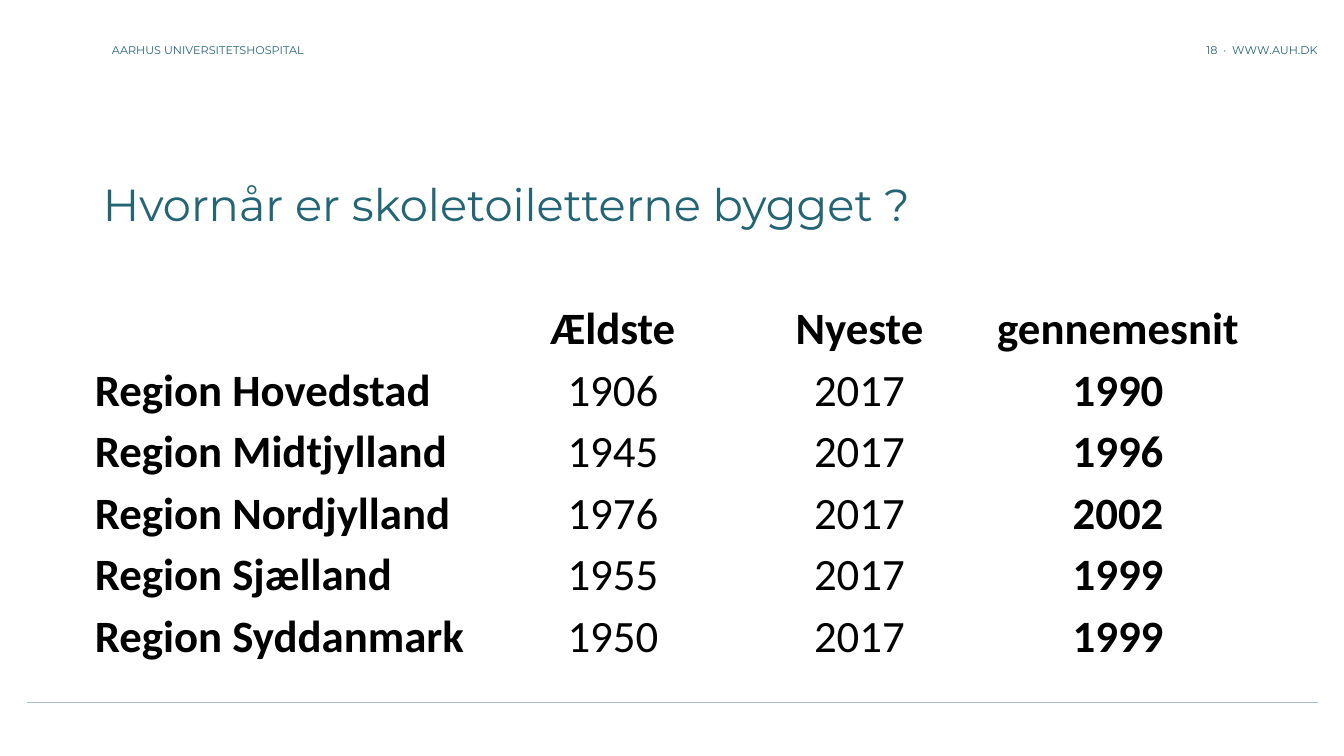
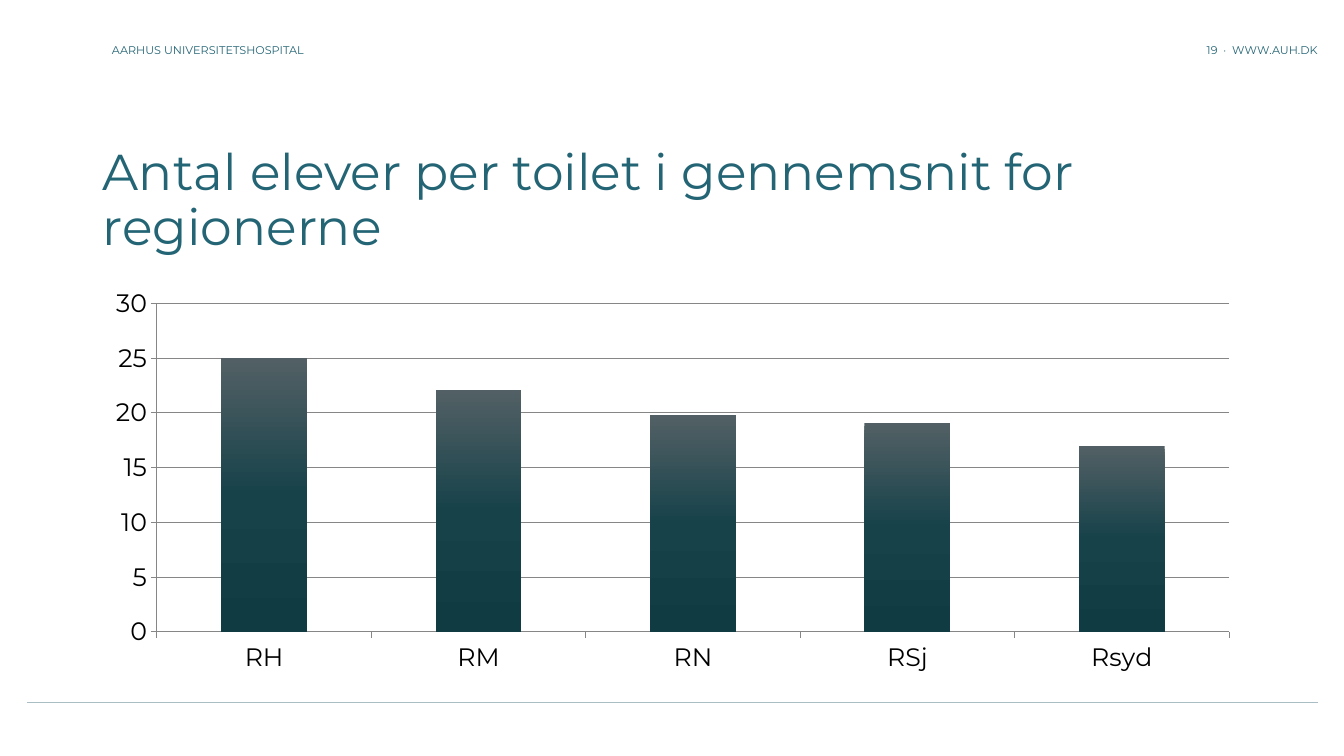
"""Build two slides on Danish school toilets: construction years and pupils per toilet."""
import copy

import pptx
import pptx.chart.data
import pptx.dml.color
import pptx.enum.chart
import pptx.enum.shapes
import pptx.enum.text
import pptx.oxml
import pptx.oxml.ns
import pptx.util

RGBColor = pptx.dml.color.RGBColor
Pt = pptx.util.Pt
Align = pptx.enum.text.PP_ALIGN
Anchor = pptx.enum.text.MSO_ANCHOR

PX = 9144
SLIDE_SIZE = (1333, 750)
TEAL = RGBColor(0x24, 0x65, 0x75)
RULE = RGBColor(0xA9, 0xBE, 0xC4)
GRID = RGBColor(0x86, 0x86, 0x86)
BLACK = RGBColor(0, 0, 0)
BAR_STOPS = [
    (0, RGBColor(0x52, 0x60, 0x65)),
    (0.5, RGBColor(0x17, 0x42, 0x4A)),
    (1, RGBColor(0x11, 0x3B, 0x43)),
]
HEADING_FONT = "Montserrat"
TABLE_FONT = "Calibri"

ORGANISATION = "AARHUS UNIVERSITETSHOSPITAL"
WEBSITE = "WWW.AUH.DK"
FIRST_NUMBER = 18

YEARS_TITLE = {"text": "Hvornår er skoletoiletterne bygget ?", "top": 89, "size": 32}
YEARS = [
    ("", "Ældste", "Nyeste", "gennemesnit"),
    ("Region Hovedstad", "1906", "2017", "1990"),
    ("Region Midtjylland", "1945", "2017", "1996"),
    ("Region Nordjylland", "1976", "2017", "2002"),
    ("Region Sjælland", "1955", "2017", "1999"),
    ("Region Syddanmark", "1950", "2017", "1999"),
]
YEARS_COLUMNS = [395, 242, 247, 266]
YEARS_ROW = 61

PUPILS_TITLE = {
    "text": "Antal elever per toilet i gennemsnit for regionerne", "top": 114, "size": 36,
}
PUPILS = {"RH": 25, "RM": 22.1, "RN": 19.8, "RSj": 19.1, "Rsyd": 17}

CONTENT_LEFT, CONTENT_WIDTH = 92, 1150


def px(*lengths):
    return [pptx.util.Emu(length * PX) for length in lengths]


def apply(target, values):
    for name, value in values.items():
        setattr(target, name, value)


def style_font(font, name, size, color, bold=False):
    apply(font, {"name": name, "size": Pt(size), "bold": bold})
    font.color.rgb = color


def add_header(slide, text, left, width, alignment):
    frame = slide.shapes.add_textbox(*px(left, 0, width, 56)).text_frame
    apply(frame, {
        "word_wrap": True, "vertical_anchor": Anchor.BOTTOM, "margin_left": 0,
        "margin_right": 0, "margin_top": 0, "margin_bottom": 0,
    })
    paragraph = frame.paragraphs[0]
    apply(paragraph, {"text": text, "alignment": alignment})
    style_font(paragraph.font, HEADING_FONT, 8, TEAL)


def add_slide(presentation, title):
    slide = presentation.slides.add_slide(presentation.slide_layouts[5])
    number = FIRST_NUMBER + len(presentation.slides) - 1
    add_header(slide, f"{number}  ·  {WEBSITE}", 968, 339, Align.RIGHT)
    add_header(slide, ORGANISATION, 111, 445, Align.LEFT)

    rule = slide.shapes.add_connector(
        pptx.enum.shapes.MSO_CONNECTOR.STRAIGHT, *px(27, 697, 1307, 697))
    rule.line.color.rgb = RULE
    rule.line.width = Pt(0.5)
    properties = rule._element.find(pptx.oxml.ns.qn("p:spPr"))
    properties.append(pptx.oxml.parse_xml(
        f"<a:effectLst {pptx.oxml.ns.nsdecls('a')}/>"))

    shape = slide.shapes.title
    left, top, width, height = px(CONTENT_LEFT, title["top"], CONTENT_WIDTH, 145)
    apply(shape, {"left": left, "top": top, "width": width, "height": height})
    apply(shape.text_frame, {
        "word_wrap": True, "vertical_anchor": Anchor.BOTTOM,
        "auto_size": pptx.enum.text.MSO_AUTO_SIZE.NONE,
    })
    paragraph = shape.text_frame.paragraphs[0]
    apply(paragraph, {
        "text": title["text"], "alignment": Align.LEFT,
        "line_spacing": 0.9, "space_after": Pt(6),
    })
    style_font(paragraph.font, HEADING_FONT, title["size"], TEAL)
    return slide


def add_years_table(slide):
    table = slide.shapes.add_table(
        len(YEARS), len(YEARS_COLUMNS),
        *px(CONTENT_LEFT, 293, CONTENT_WIDTH, YEARS_ROW * len(YEARS))).table
    apply(table, {"first_row": False, "horz_banding": False})
    for column, width in zip(table.columns, px(*YEARS_COLUMNS)):
        column.width = width
    inset, = px(2)
    for row_index, row in enumerate(YEARS):
        for column_index, text in enumerate(row):
            cell = table.cell(row_index, column_index)
            cell.fill.background()
            apply(cell, {
                "vertical_anchor": Anchor.BOTTOM, "margin_left": inset,
                "margin_right": inset, "margin_top": inset, "margin_bottom": 0,
            })
            paragraph = cell.text_frame.paragraphs[0]
            apply(paragraph, {
                "text": text, "alignment": Align.CENTER if column_index else Align.LEFT,
            })
            bold = row_index == 0 or column_index in (0, len(row) - 1)
            style_font(paragraph.font, TABLE_FONT, 32, BLACK, bold)


def fill_bars(series):
    fill = series.format.fill
    fill.gradient()
    fill.gradient_angle = 270
    stop_list = series._element.find(".//" + pptx.oxml.ns.qn("a:gsLst"))
    stop_list.append(copy.deepcopy(stop_list[-1]))
    for stop, (position, color) in zip(fill.gradient_stops, BAR_STOPS):
        stop.position = position
        stop.color.rgb = color


def add_pupils_chart(slide):
    data = pptx.chart.data.CategoryChartData()
    data.categories = list(PUPILS)
    data.add_series("Series 1", PUPILS.values())
    chart = slide.shapes.add_chart(
        pptx.enum.chart.XL_CHART_TYPE.COLUMN_CLUSTERED,
        *px(CONTENT_LEFT, 278, CONTENT_WIDTH, 397), data).chart
    apply(chart, {"has_legend": False, "has_title": False})
    style_font(chart.font, HEADING_FONT, 10, BLACK)
    apply(chart.plots[0], {"gap_width": 150, "vary_by_categories": False})
    fill_bars(chart.plots[0].series[0])

    apply(chart.value_axis, {
        "minimum_scale": 0, "maximum_scale": 30, "major_unit": 5,
        "has_major_gridlines": True,
    })
    for axis in (chart.category_axis, chart.value_axis):
        axis.major_tick_mark = pptx.enum.chart.XL_TICK_MARK.OUTSIDE
        style_font(axis.tick_labels.font, HEADING_FONT, 18, BLACK)
    for part in (chart.category_axis, chart.value_axis, chart.value_axis.major_gridlines):
        part.format.line.color.rgb = GRID
        part.format.line.width = Pt(0.75)


def main():
    presentation = pptx.Presentation()
    width, height = px(*SLIDE_SIZE)
    apply(presentation, {"slide_width": width, "slide_height": height})
    add_years_table(add_slide(presentation, YEARS_TITLE))
    add_pupils_chart(add_slide(presentation, PUPILS_TITLE))
    presentation.save("out.pptx")


if __name__ == "__main__":
    main()
